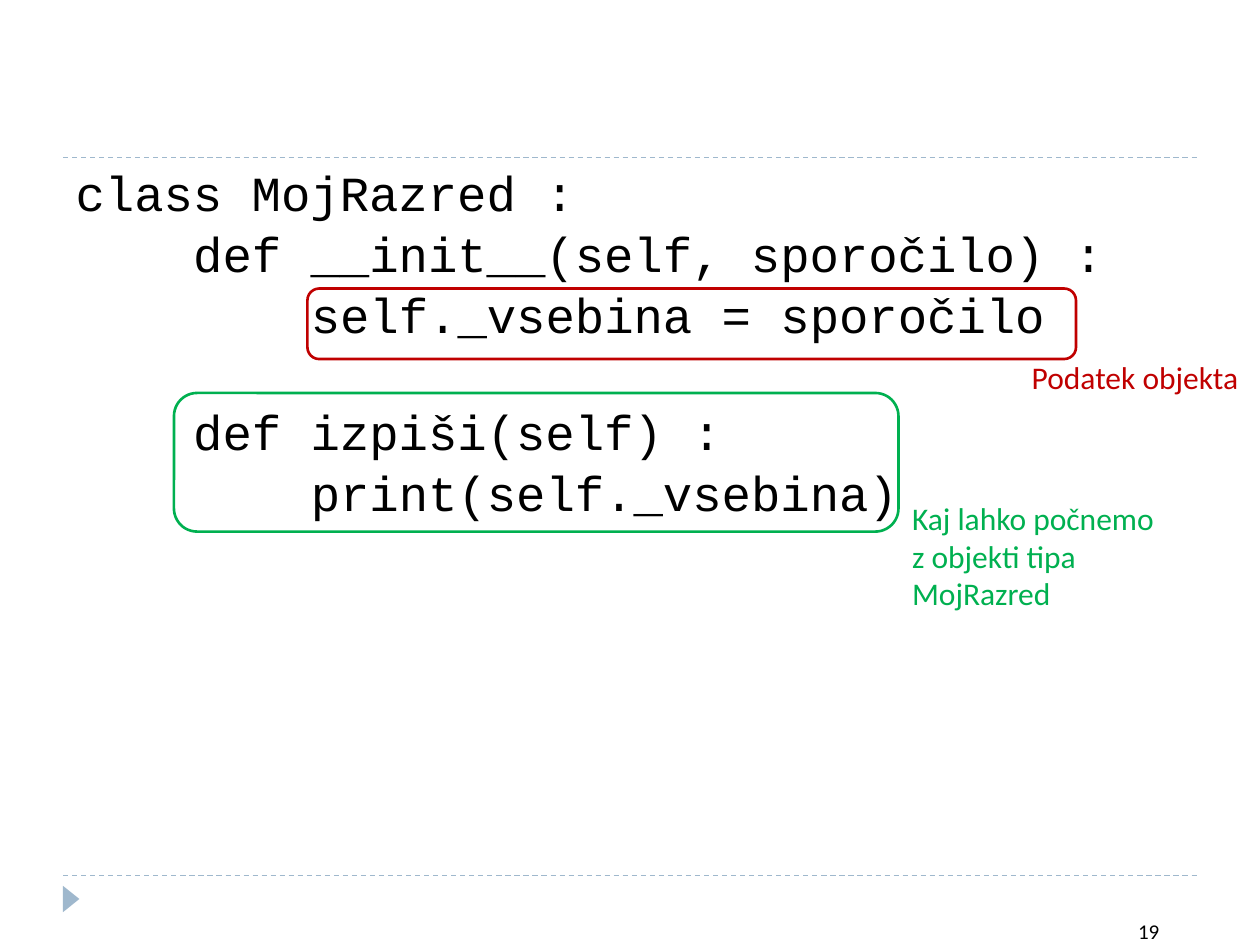
"""Build a slide that explains the parts of a Python class."""
from lxml.etree import SubElement
from pptx import Presentation
from pptx.dml.color import RGBColor
from pptx.enum.dml import MSO_LINE
from pptx.enum.shapes import MSO_CONNECTOR as Connector, MSO_SHAPE as Shape
from pptx.enum.text import MSO_ANCHOR as Anchor, MSO_AUTO_SIZE as AutoSize, PP_ALIGN as Align
from pptx.oxml.ns import qn
from pptx.util import Pt

COLORS = {"rule": "9FB8CD", "code": "000000", "data": "C00000", "method": "00B050"}
CODE_SIZE = 28
INDENT_STEP = 4 * 0.6 * CODE_SIZE
LINE_GAP, BLOCK_GAP = 8, 40
CODE = [
    (0, "class MojRazred :", LINE_GAP),
    (1, "def __init__(self, sporočilo) :", LINE_GAP),
    (2, "self._vsebina = sporočilo", LINE_GAP),
    (1, "def izpiši(self) :", BLOCK_GAP),
    (2, "print(self._vsebina)", LINE_GAP),
]


def color(name):
    return RGBColor.from_string(COLORS[name])


def box(left, top, width, height):
    return Pt(left), Pt(top), Pt(width), Pt(height)


def add_run(paragraph, text, size, font, tone):
    run = paragraph.add_run()
    run.text = text
    run.font.size = Pt(size)
    run.font.name = font
    run.font.color.rgb = color(tone)


def add_rule(slide, y):
    rule = slide.shapes.add_connector(Connector.STRAIGHT, Pt(36), Pt(y), Pt(684), Pt(y))
    rule.line.color.rgb = color("rule")
    rule.line.width = Pt(0.75)
    rule.line.dash_style = MSO_LINE.DASH
    SubElement(rule._element.spPr, qn("a:effectLst"))


def add_marker(slide):
    marker = slide.shapes.add_shape(Shape.ISOSCELES_TRIANGLE, *box(33.1, 509, 15.1, 9.4))
    marker.rotation = 90
    marker.shadow.inherit = False
    marker.fill.solid()
    marker.fill.fore_color.rgb = color("rule")
    marker.line.fill.background()


def fill_code(body):
    body.left, body.top, body.width, body.height = box(36, 95.8, 648, 388.8)
    frame = body.text_frame
    frame.auto_size = AutoSize.NONE
    frame.vertical_anchor = Anchor.TOP
    for number, (depth, text, gap) in enumerate(CODE):
        line = frame.add_paragraph() if number else frame.paragraphs[0]
        line.line_spacing = 0.8
        line.space_before = Pt(gap)
        properties = line._p.get_or_add_pPr()
        properties.set("marL", str(Pt(depth * INDENT_STEP)))
        properties.set("indent", "0")
        SubElement(properties, qn("a:buNone"))
        add_run(line, text, CODE_SIZE, "Courier New", "code")


def add_highlight(slide, place, tone):
    highlight = slide.shapes.add_shape(Shape.ROUNDED_RECTANGLE, *box(*place))
    highlight.shadow.inherit = False
    highlight.fill.background()
    highlight.line.color.rgb = color(tone)
    highlight.line.width = Pt(1.5)


def add_label(slide, place, text, size, tone, align=Align.LEFT):
    label = slide.shapes.add_textbox(*box(*place))
    label.text_frame.word_wrap = True
    paragraph = label.text_frame.paragraphs[0]
    paragraph.alignment = align
    add_run(paragraph, text, size, "Calibri", tone)


def main():
    deck = Presentation()
    deck.slide_width, deck.slide_height = Pt(720), Pt(540)
    slide = deck.slides.add_slide(deck.slide_layouts[1])
    title = slide.shapes.title._element
    title.getparent().remove(title)
    fill_code(slide.placeholders[1])
    for y in (500.4, 90):
        add_rule(slide, y)
    add_marker(slide)
    add_label(slide, (513.4, 521.3, 156.2, 37.4), "19", 12, "code", Align.RIGHT)
    add_highlight(slide, (175.7, 164.9, 439.2, 40.3), "data")
    add_highlight(slide, (99.4, 224.6, 414, 79.2), "method")
    add_label(slide, (582.5, 200.9, 158.4, 51.1), "Podatek objekta", 18, "data")
    add_label(slide, (514.1, 281.5, 158.4, 94.3),
              "Kaj lahko počnemo z objekti tipa MojRazred", 18, "method")
    deck.save("out.pptx")


if __name__ == "__main__":
    main()
